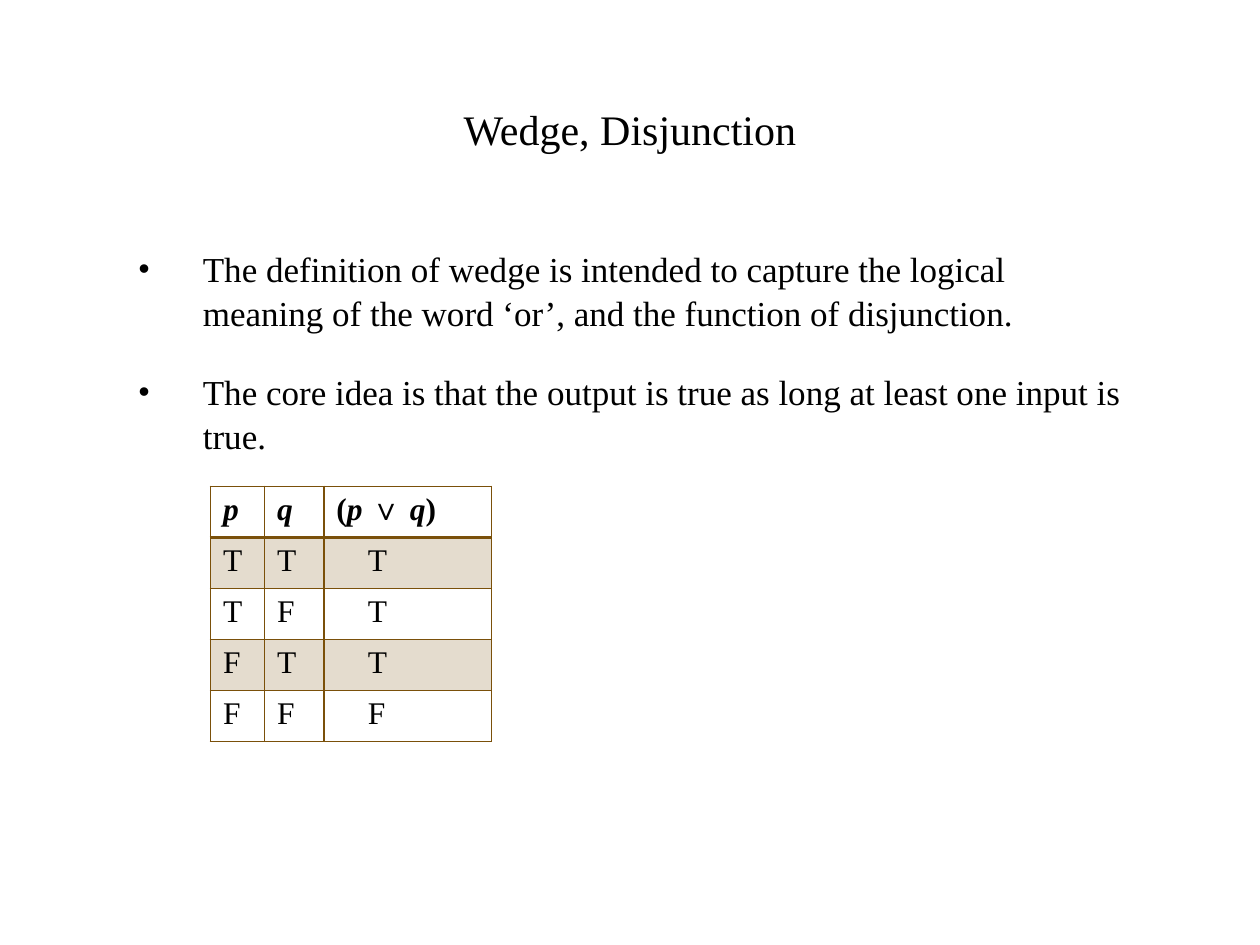
from lxml import etree
from pptx import Presentation
from pptx import util as u
from pptx.dml.color import RGBColor
from pptx.enum import text
from pptx.oxml.ns import qn

HEX = {"ink": "000000", "brown": "7A500A"}
FACE = "Times New Roman"

deck = Presentation()
deck.slide_width, deck.slide_height = u.Inches(10), u.Inches(7.5)
W, H = deck.slide_width, deck.slide_height
slide = deck.slides.add_slide(deck.slide_layouts[1])


def style(font, **form):
    for key, val in {"name": FACE, **form}.items():
        setattr(font, key, val)
    font.color.rgb = RGBColor.from_string(HEX["ink"])


def place(shape, left, top, wide, high):
    shape.left, shape.top = int(W * left), int(H * top)
    shape.width, shape.height = int(W * wide), int(H * high)


# Title
title = slide.shapes.title
place(title, 0.1, 0.073, 0.8, 0.127)
title.text_frame.text = "Wedge, Disjunction"
title.text_frame.vertical_anchor = text.MSO_ANCHOR.MIDDLE
head = title.text_frame.paragraphs[0]
head.alignment = text.PP_ALIGN.CENTER
style(head.font, size=u.Pt(24))

# Bulleted list
body = slide.placeholders[1]
place(body, 0.1, 0.253, 0.8, 0.592)
frame = body.text_frame
frame.auto_size = text.MSO_AUTO_SIZE.NONE
frame.text = "\n".join([
    "The definition of wedge is intended to capture the logical meaning "
    "of the word ‘or’, and the function of disjunction.",
    "The core idea is that the output is true as long at least one input is true.",
])
for i, para in enumerate(frame.paragraphs):
    props = para._p.get_or_add_pPr()
    props.set("marL", str(u.Inches(0.51)))
    props.set("indent", str(-u.Inches(0.51)))
    etree.SubElement(props, qn("a:buSzPct"), val="90000")
    etree.SubElement(props, qn("a:buChar"), char="•")
    para.space_before = u.Pt(20 if i else 0)
    para.line_spacing = 1.05
    style(para.font, size=u.Pt(20))

# Truth table
cols = [0.43, 0.47, 1.33]
rows = [["p", "q", "(p ∨ q)"]]
for p in (True, False):
    for q in (True, False):
        rows.append(["T" if val else "F" for val in (p, q, p or q)])
grid = slide.shapes.add_table(len(rows), len(cols), u.Inches(1.67), u.Inches(3.86),
                              u.Inches(sum(cols)), u.Inches(0.405 * len(rows))).table
for col, wide in zip(grid.columns, cols):
    col.width = u.Inches(wide)

for r, row in enumerate(rows):
    for c, word in enumerate(row):
        cell = grid.cell(r, c)
        para = cell.text_frame.paragraphs[0]
        # Variables are italic, brackets and the wedge upright
        parts = ["(", "p ", "∨ ", "q", ")"] if word.startswith("(") else [word]
        for part in parts:
            run = para.add_run()
            run.text = part
            style(run.font, size=u.Pt(18), bold=r == 0, italic=part.strip() in ("p", "q"))
        if r and c == 2:
            cell.margin_left = u.Inches(0.35)

        # Tint on every other row
        props = cell._tc.get_or_add_tcPr()
        if r % 2:
            cell.fill.solid()
            cell.fill.fore_color.rgb = RGBColor.from_string(HEX["brown"])
            tint = props.find(".//" + qn("a:srgbClr"))
            etree.SubElement(tint, qn("a:alpha"), val="20000")
        else:
            cell.fill.background()

        # Borders, heavier under the header
        for i, side in enumerate("LRTB"):
            heavy = (r, side) in ((0, "B"), (1, "T"))
            line = etree.Element(qn("a:ln" + side), w=str(u.Pt(2 if heavy else 1)))
            paint = etree.SubElement(line, qn("a:solidFill"))
            etree.SubElement(paint, qn("a:srgbClr"), val=HEX["brown"])
            props.insert(i, line)

deck.save("out.pptx")
